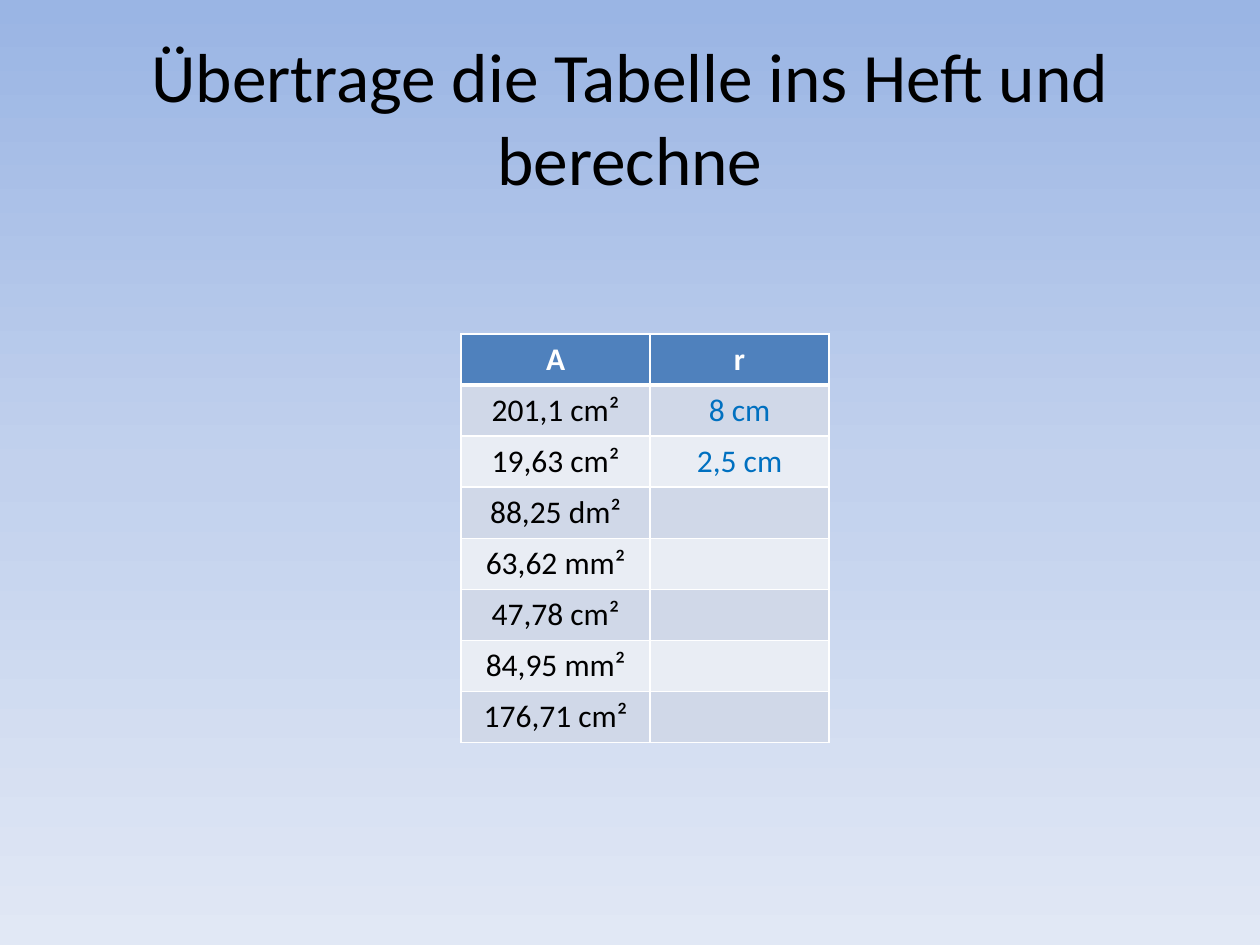
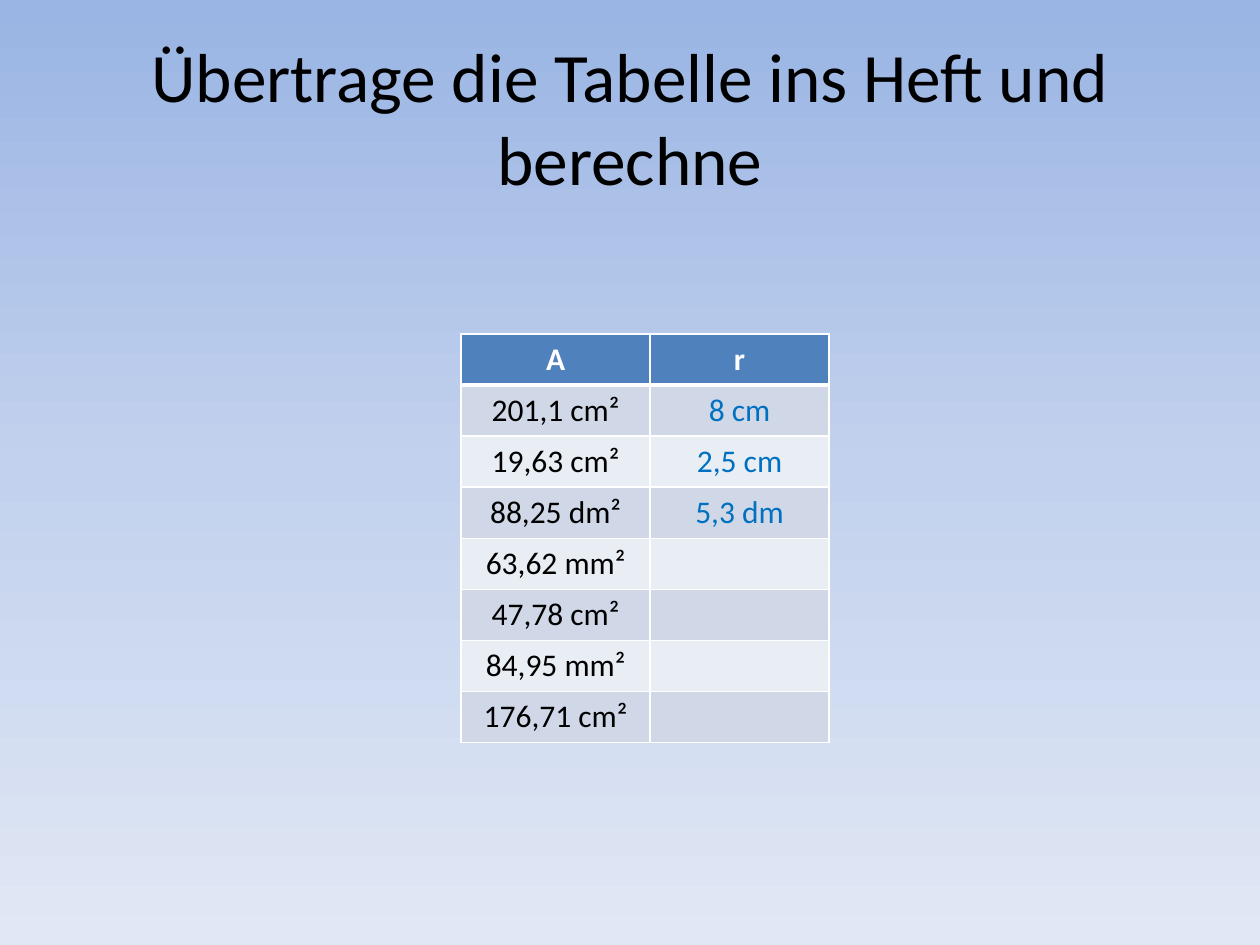
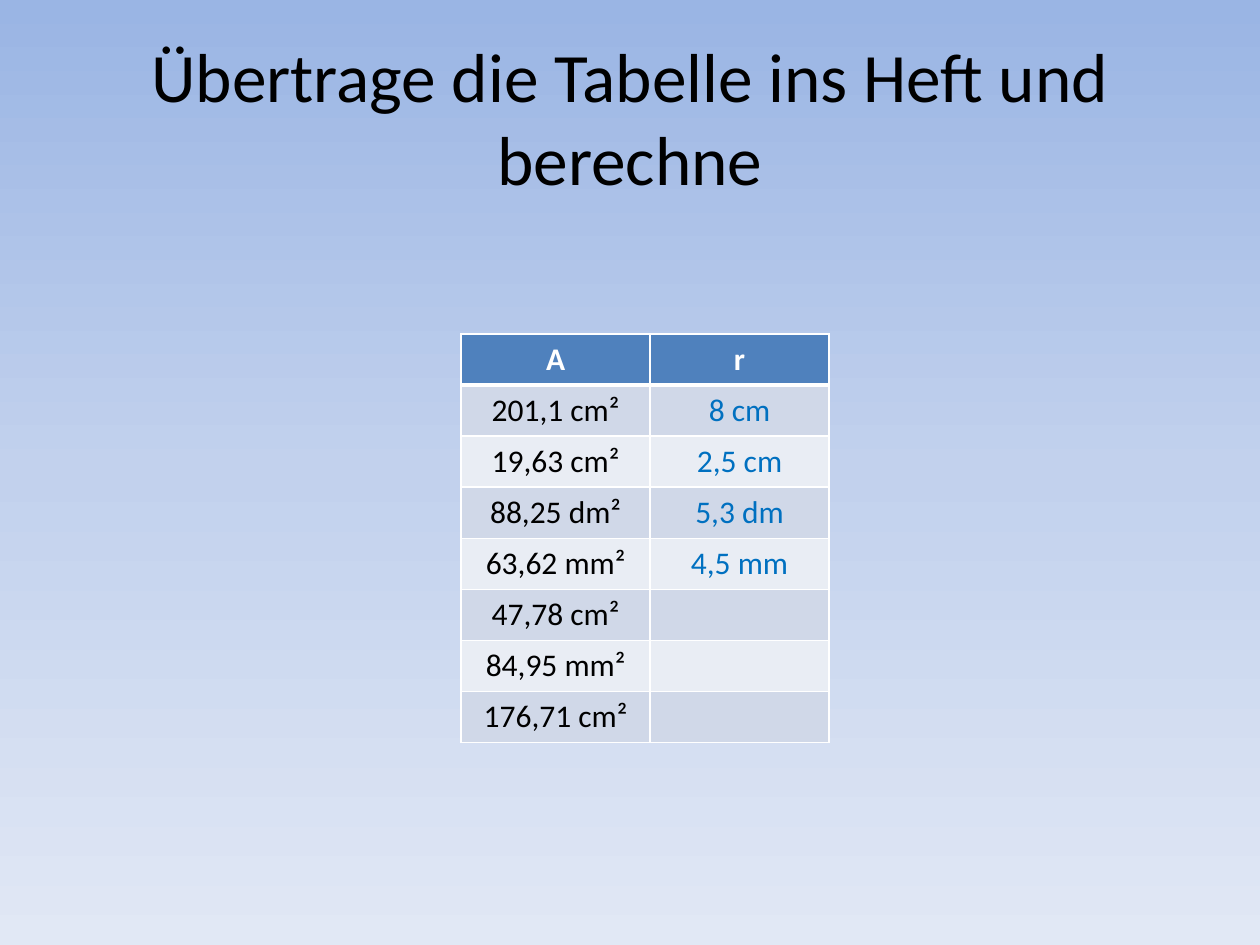
from copy import deepcopy

from lxml.etree import SubElement
from pptx import Presentation
from pptx.dml.color import RGBColor
from pptx.enum.text import MSO_ANCHOR, MSO_AUTO_SIZE, PP_ALIGN
from pptx.oxml.ns import qn
from pptx.util import Inches, Pt

FONT = "Calibri"
BLACK = RGBColor(0x00, 0x00, 0x00)
WHITE = RGBColor(0xFF, 0xFF, 0xFF)
HEAD = RGBColor(0x4F, 0x81, 0xBD)
BANDS = (RGBColor(0xD0, 0xD8, 0xE8), RGBColor(0xE9, 0xED, 0xF4))
ANSWER = RGBColor(0x00, 0x70, 0xC0)
SKY = (
    (0, RGBColor(0x9A, 0xB5, 0xE4)),
    (0.5, RGBColor(0xC2, 0xD1, 0xED)),
    (1, RGBColor(0xE1, 0xE8, 0xF5)),
)

TITLE = "Übertrage die Tabelle ins Heft und berechne"
AREAS = ("201,1 cm²", "19,63 cm²", "88,25 dm²", "63,62 mm²",
         "47,78 cm²", "84,95 mm²", "176,71 cm²")
RADII = ("8 cm", "2,5 cm", "5,3 dm", "4,5 mm")
WIDTHS = (1.5, 1.42)


def paint_sky(master):
    """Give the master, and so every slide, the gradient background."""
    fill = master.background.fill
    fill.gradient()
    fill.gradient_angle = 270
    stops = master.element.find(".//" + qn("a:gsLst"))
    stops.append(deepcopy(stops[-1]))
    for stop, (pos, color) in zip(fill.gradient_stops, SKY):
        stop.position = pos
        stop.color.rgb = color


def add_run(frame, text, size, color, bold=False):
    para = frame.paragraphs[0]
    para.alignment = PP_ALIGN.CENTER
    run = para.add_run()
    run.text = text
    font = run.font
    font.name, font.size, font.bold = FONT, Pt(size), bold
    font.color.rgb = color


def add_title(slide):
    title = slide.shapes.title
    title.left, title.top = Inches(0.5), Inches(0.3)
    title.width, title.height = Inches(9), Inches(1.25)
    frame = title.text_frame
    frame.word_wrap = True
    frame.auto_size = MSO_AUTO_SIZE.NONE
    frame.vertical_anchor = MSO_ANCHOR.MIDDLE
    add_run(frame, TITLE, 39.6, BLACK)


def set_edges(cell, top, bottom):
    """Draw white cell borders; top and bottom are widths in points."""
    props = cell._tc.get_or_add_tcPr()
    for side, width in (("L", 1), ("R", 1), ("T", top), ("B", bottom)):
        line = SubElement(props, qn("a:ln" + side), w=str(Pt(width)))
        solid = SubElement(line, qn("a:solidFill"))
        SubElement(solid, qn("a:srgbClr"), val=str(WHITE))


def add_cell(cell, row, text, color):
    head = row == 0
    set_edges(cell, 3 if row == 1 else 1, 3 if head else 1)
    cell.fill.solid()
    cell.fill.fore_color.rgb = HEAD if head else BANDS[(row - 1) % 2]
    if text:
        add_run(cell.text_frame, text, 18, WHITE if head else color, head)


def add_grid(slide, solved):
    """Add the table of areas with the first solved radii filled in."""
    areas = ("A",) + AREAS
    radii = ("r",) + RADII[:solved] + ("",) * (len(AREAS) - solved)
    grid = slide.shapes.add_table(
        len(areas), 2, Inches(3.66), Inches(2.65),
        Inches(sum(WIDTHS)), Inches(3.24)).table
    for col, width in zip(grid.columns, WIDTHS):
        col.width = Inches(width)
    for row, (area, radius) in enumerate(zip(areas, radii)):
        add_cell(grid.cell(row, 0), row, area, BLACK)
        add_cell(grid.cell(row, 1), row, radius, ANSWER)


def main():
    deck = Presentation()
    deck.slide_width, deck.slide_height = Inches(10), Inches(7.5)
    paint_sky(deck.slide_master)
    for solved in (2, 3, 4):
        slide = deck.slides.add_slide(deck.slide_layouts[5])
        add_title(slide)
        add_grid(slide, solved)
    deck.save("out.pptx")


if __name__ == "__main__":
    main()
